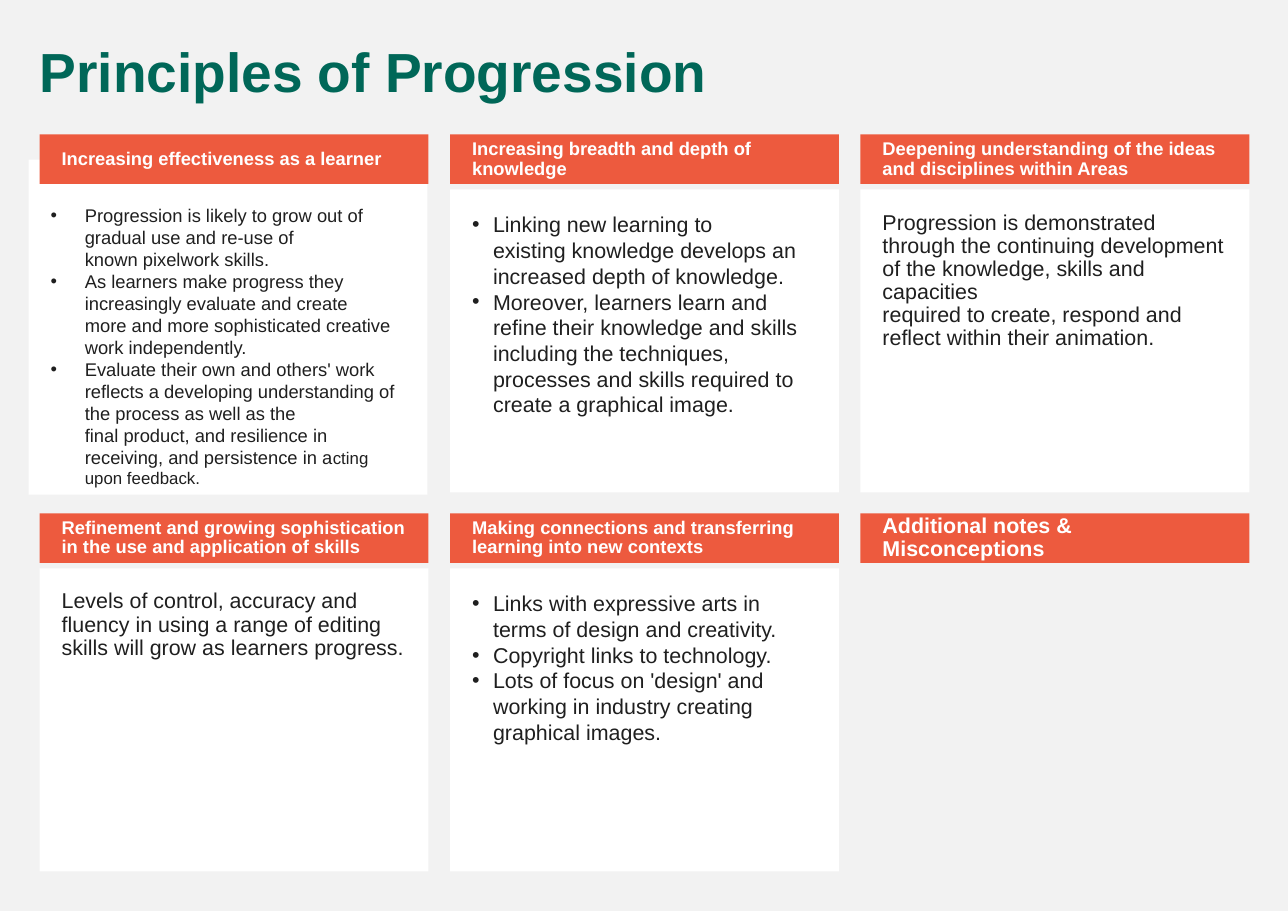
from dataclasses import dataclass
from typing import Any

import pptx
import pptx.dml.color
import pptx.enum.shapes
import pptx.enum.text
import pptx.oxml.ns
import pptx.util
from lxml import etree

Inches = pptx.util.Inches
Pt = pptx.util.Pt
ANCHOR = pptx.enum.text.MSO_ANCHOR

COLORS = {
    "background": "F2F2F2",
    "title": "006758",
    "header": "ED5A3E",
    "header_text": "FFFFFF",
    "panel": "FFFFFF",
    "panel_text": "1F1F1F",
}
FONT = "Arial"
TIE, NO_BREAK_SPACE = "~", chr(160)
LEFT, WIDTH = 0.36, 3.53
COLUMN_PITCH = (7.81 - LEFT) / 2
HEADER_TOPS = (1.22, 4.66)
HEADER_HEIGHT, PANEL_HEIGHT = 0.45, 2.75
PANEL_OFFSET = 0.5

PANEL_INSETS = {"margin_left": 0.2, "margin_top": 0.2, "margin_right": 0.2, "margin_bottom": 0.2}
HEADER_INSETS = {"margin_left": 0.2, "margin_top": 0.05, "margin_right": 0.1, "margin_bottom": 0.05}
TITLE_INSETS = {"margin_left": 0.1, "margin_top": 0.05, "margin_right": 0.1, "margin_bottom": 0.05}


@dataclass(frozen=True)
class TextStyle:
    size: float
    color: str
    bold: bool = False
    line_spacing: float = 0.9
    space_before: float = 11
    indent: float = 0


@dataclass(frozen=True)
class Principle:
    heading: str
    paragraphs: tuple[str, ...] = ()
    heading_size: float = 12
    size: float = 14
    indent: float = 0
    ending: str = ""
    box: tuple[float, float, float, float] | None = None
    top_inset: float = 0.2


PRINCIPLES = (
    Principle(
        "Increasing effectiveness as a learner",
        (
            "Progression is likely to grow out of gradual use and re-use of known~pixelwork skills.",
            "As learners make progress they increasingly evaluate and create more~and more "
            "sophisticated creative work independently.",
            "Evaluate their own and others' work reflects a developing~understanding of the process "
            "as well as the final~product, and resilience~in receiving, and persistence in a",
        ),
        size=12, indent=0.31, ending="cting upon feedback.",
        box=(0.26, 1.45, 3.62, 3.04), top_inset=0.4,
    ),
    Principle(
        "Increasing breadth and depth of knowledge",
        (
            "Linking new learning to existing~knowledge develops an increased~depth of~knowledge.",
            "Moreover, learners learn and refine~their knowledge and skills including the~techniques, "
            "processes and skills~required to create a graphical image.",
        ),
        indent=0.19,
    ),
    Principle(
        "Deepening understanding of the ideas and~disciplines within Areas",
        (
            "Progression is demonstrated through the~continuing development of the knowledge,~skills "
            "and capacities required~to~create,~respond and reflect within~their~animation.",
        ),
    ),
    Principle(
        "Refinement and growing sophistication in the use and~application of skills",
        (
            "Levels of control, accuracy and fluency in~using a range of editing skills will grow~"
            "as learners progress.",
        ),
    ),
    Principle(
        "Making connections and transferring learning into~new contexts",
        (
            "Links with expressive arts in terms of~design and creativity.",
            "Copyright~links to technology.",
            "Lots of focus on~'design' and working~in~industry creating graphical images.",
        ),
        indent=0.19,
    ),
    Principle("Additional notes & Misconceptions", heading_size=14),
)


def rgb(name: str) -> pptx.dml.color.RGBColor:
    return pptx.dml.color.RGBColor.from_string(COLORS[name])


def set_all(obj: Any, values: dict[str, Any]) -> None:
    for name, value in values.items():
        setattr(obj, name, value)


def place(sp: Any, box: tuple[float, float, float, float]) -> None:
    set_all(sp, dict(zip(("left", "top", "width", "height"), map(Inches, box))))


def add_box(slide: Any, box: tuple[float, float, float, float]) -> Any:
    sp = slide.shapes.add_shape(pptx.enum.shapes.MSO_SHAPE.RECTANGLE, *map(Inches, box))
    sp.shadow.inherit = False
    return sp


def paint(sp: Any, color: str) -> None:
    sp.fill.solid()
    sp.fill.fore_color.rgb = rgb(color)
    sp.line.fill.background()


def add_run(p: Any, text: str, size: float, style: TextStyle) -> None:
    """Add formatted text, turning each tie into a no-break space."""
    r = p.add_run()
    r.text = text.replace(TIE, NO_BREAK_SPACE)
    set_all(r.font, {"name": FONT, "size": Pt(size), "bold": style.bold})
    r.font.color.rgb = rgb(style.color)


def set_bullet(p: Any, indent: float) -> None:
    """Give the paragraph a hanging bullet, or none when the indent is zero."""
    pPr = p._p.get_or_add_pPr()
    pPr.set("marL", str(Inches(indent)))
    pPr.set("indent", str(-Inches(indent)))
    tag = "a:buChar" if indent else "a:buNone"
    bullet = etree.SubElement(pPr, pptx.oxml.ns.qn(tag))
    if indent:
        bullet.set("char", "•")


def write(sp: Any, paragraphs: tuple[str, ...], style: TextStyle,
          insets: dict[str, float], anchor: Any) -> None:
    tf = sp.text_frame
    set_all(tf, {"word_wrap": True, "auto_size": pptx.enum.text.MSO_AUTO_SIZE.NONE,
                 "vertical_anchor": anchor})
    set_all(tf, {name: Inches(value) for name, value in insets.items()})
    for i, text in enumerate(paragraphs):
        p = tf.add_paragraph() if i else tf.paragraphs[0]
        set_all(p, {"alignment": pptx.enum.text.PP_ALIGN.LEFT,
                    "line_spacing": style.line_spacing,
                    "space_before": Pt(style.space_before)})
        set_bullet(p, style.indent)
        add_run(p, text, style.size, style)


def draw_panel(sp: Any, item: Principle) -> None:
    paint(sp, "panel")
    style = TextStyle(item.size, "panel_text")
    if item.indent:
        style = TextStyle(item.size, "panel_text", line_spacing=1.0, space_before=0, indent=item.indent)
    write(sp, item.paragraphs, style, PANEL_INSETS | {"margin_top": item.top_inset}, ANCHOR.TOP)
    if item.ending:
        add_run(sp.text_frame.paragraphs[-1], item.ending, item.size - 1, style)


def main() -> None:
    prs = pptx.Presentation()
    set_all(prs, {"slide_width": Inches(11.69), "slide_height": Inches(8.27)})
    slide = prs.slides.add_slide(prs.slide_layouts.get_by_name("Comparison"))
    slide.background.fill.solid()
    slide.background.fill.fore_color.rgb = rgb("background")

    title = slide.shapes.title
    bodies = [sp for sp in slide.placeholders if sp.placeholder_format.idx in (1, 2, 3, 4)]
    place(title, (0.26, 0.36, 11.08, 0.65))
    write(title, ("Principles of Progression",), TextStyle(36, "title", True), TITLE_INSETS, ANCHOR.TOP)

    for i, item in enumerate(PRINCIPLES):
        row, column = divmod(i, 3)
        left, top = LEFT + column * COLUMN_PITCH, HEADER_TOPS[row]
        if item.paragraphs:
            box = item.box or (left, top + PANEL_OFFSET, WIDTH, PANEL_HEIGHT)
            if item.indent:
                panel = bodies.pop(0)
                place(panel, box)
            else:
                panel = add_box(slide, box)
            draw_panel(panel, item)
        header = add_box(slide, (left, top, WIDTH, HEADER_HEIGHT))
        paint(header, "header")
        write(header, (item.heading,), TextStyle(item.heading_size, "header_text", True),
              HEADER_INSETS, ANCHOR.MIDDLE)

    for sp in bodies:
        sp.element.getparent().remove(sp.element)
    prs.save("out.pptx")


if __name__ == "__main__":
    main()
